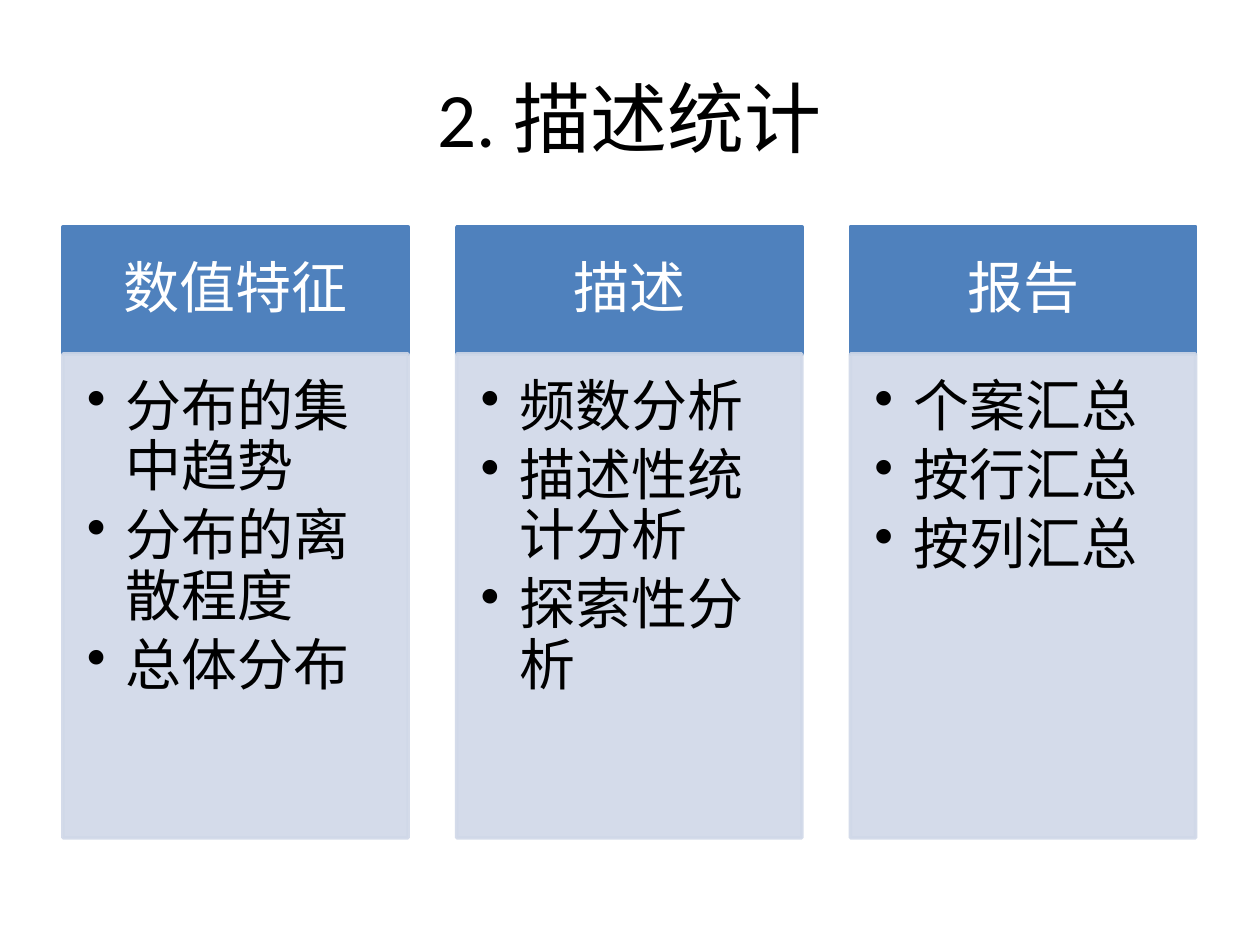
from lxml import etree
from pptx import Presentation
from pptx.dml.color import RGBColor
from pptx.enum import shapes, text
from pptx.oxml import ns
from pptx.util import Inches, Pt

# Content
TITLE = "2. 描述统计"
COLUMNS = [
    ("数值特征", ["分布的集中趋势", "分布的离散程度", "总体分布"]),
    ("描述", ["频数分析", "描述性统计分析", "探索性分析"]),
    ("报告", ["个案汇总", "按行汇总", "按列汇总"]),
]

# Format
FONT = "Calibri"
BLACK = RGBColor(0x00, 0x00, 0x00)
WHITE = RGBColor(0xFF, 0xFF, 0xFF)
BLUE = RGBColor(0x4F, 0x81, 0xBD)
PALE_BLUE = RGBColor(0xD0, 0xD8, 0xE8)

# Layout, in inches
LEFT, TOP = 0.5, 1.8
COLUMN_WIDTH, COLUMN_STEP = 2.74, 3.125
HEADER_HEIGHT, BODY_HEIGHT = 1.01, 3.84
HEADER_INSETS = (0.25, 0.14, 0.25, 0.14)
BODY_INSETS = (0.19, 0.19, 0.25, 0.28)
BULLET_INDENT = 0.31


def write(frame, lines, size=32, color=BLACK, align=text.PP_ALIGN.LEFT,
          anchor=text.MSO_ANCHOR.TOP, insets=None, spacing=None, after=None,
          bullet=False):
    frame.word_wrap = True
    frame.vertical_anchor = anchor
    if insets:
        (frame.margin_left, frame.margin_top,
         frame.margin_right, frame.margin_bottom) = map(Inches, insets)
    for i, line in enumerate(lines):
        paragraph = frame.add_paragraph() if i else frame.paragraphs[0]
        paragraph.alignment = align
        paragraph.line_spacing = spacing
        paragraph.space_after = after
        run = paragraph.add_run()
        run.text = line
        run.font.name, run.font.size = FONT, Pt(size)
        run.font.color.rgb = color
        if bullet:
            paragraph.level = 1
            properties = paragraph._p.get_or_add_pPr()
            properties.set("marL", str(Inches(BULLET_INDENT)))
            properties.set("indent", str(-Inches(BULLET_INDENT)))
            etree.SubElement(properties, ns.qn("a:buChar"), char="•")


def add_panel(slide, left, top, height, color, opacity=None):
    panel = slide.shapes.add_shape(
        shapes.MSO_SHAPE.RECTANGLE, Inches(left), Inches(top),
        Inches(COLUMN_WIDTH), Inches(height))
    panel.shadow.inherit = False
    panel.fill.solid()
    panel.fill.fore_color.rgb = color
    panel.line.color.rgb = color
    panel.line.width = Pt(2)
    if opacity:
        for shade in panel._element.spPr.iter(ns.qn("a:srgbClr")):
            etree.SubElement(shade, ns.qn("a:alpha"), val=str(opacity * 1000))
    return panel


prs = Presentation()
prs.slide_width, prs.slide_height = Inches(10), Inches(7.5)
slide = prs.slides.add_slide(prs.slide_layouts[5])

# Title
title = slide.shapes.title
title.left, title.top = Inches(0.5), Inches(0.3)
title.width, title.height = Inches(9), Inches(1.25)
write(title.text_frame, [TITLE], size=44, align=text.PP_ALIGN.CENTER,
      anchor=text.MSO_ANCHOR.MIDDLE)

# Columns: a header over a bulleted body
for i, (heading, topics) in enumerate(COLUMNS):
    left = LEFT + i * COLUMN_STEP
    header = add_panel(slide, left, TOP, HEADER_HEIGHT, BLUE)
    write(header.text_frame, [heading], color=WHITE, spacing=0.9,
          align=text.PP_ALIGN.CENTER, anchor=text.MSO_ANCHOR.MIDDLE,
          insets=HEADER_INSETS)
    body = add_panel(slide, left, TOP + HEADER_HEIGHT, BODY_HEIGHT,
                     PALE_BLUE, opacity=90)
    write(body.text_frame, topics, spacing=0.9, after=Pt(4.8),
          insets=BODY_INSETS, bullet=True)

prs.save("out.pptx")
